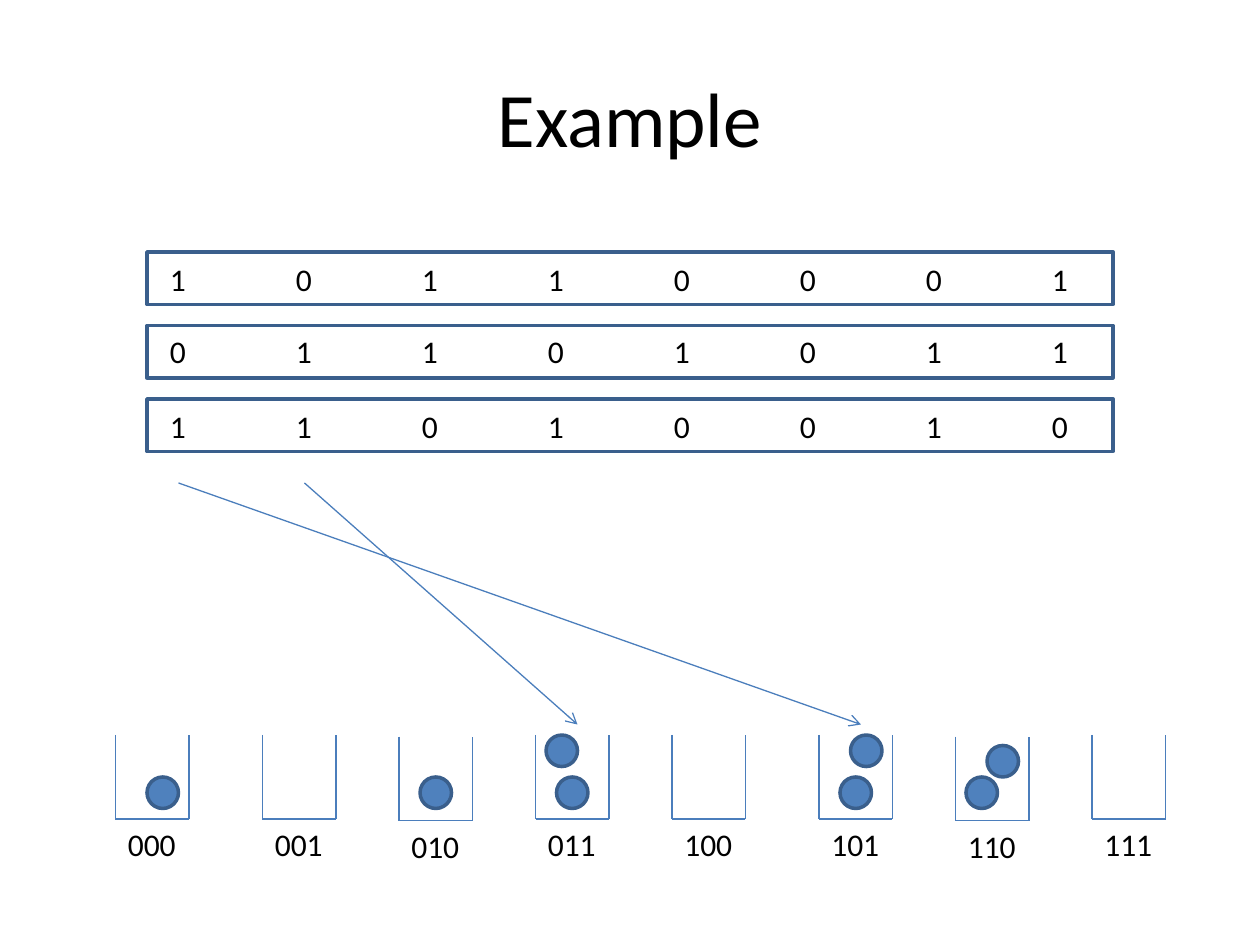
"""Build a slide that drops bit columns into eight labelled hash buckets."""
from dataclasses import dataclass

from lxml.etree import SubElement
from pptx import Presentation
from pptx.dml.color import RGBColor
from pptx.enum.shapes import MSO_CONNECTOR, MSO_SHAPE
from pptx.enum.text import MSO_ANCHOR, MSO_AUTO_SIZE, PP_ALIGN
from pptx.oxml.ns import qn
from pptx.util import Inches, Pt


@dataclass(frozen=True)
class Theme:
    font: str = "Calibri"
    ink: RGBColor = RGBColor.from_string("000000")
    ball: RGBColor = RGBColor.from_string("4F81BD")
    outline: RGBColor = RGBColor.from_string("3A5F8C")
    stroke: RGBColor = RGBColor.from_string("4B7EBC")
    title_size: Pt = Pt(44)
    body_size: Pt = Pt(18)
    outline_width: Pt = Pt(2)
    stroke_width: Pt = Pt(0.75)


theme = Theme()
deck = Presentation()
deck.slide_width, deck.slide_height = Inches(10), Inches(7.5)
page = deck.slides.add_slide(deck.slide_layouts[6])
unit = deck.slide_width / 120


def add_text(shapes, text, area, size):
    box = shapes.add_textbox(*[round(unit * length) for length in area])
    frame = box.text_frame
    frame.word_wrap = False
    frame.auto_size = MSO_AUTO_SIZE.SHAPE_TO_FIT_TEXT
    para = frame.paragraphs[0]
    para.alignment = PP_ALIGN.LEFT
    span = para.add_run()
    span.text = text
    span.font.name = theme.font
    span.font.size = size
    span.font.color.rgb = theme.ink
    return frame


def add_line(shapes, *ends):
    line = shapes.add_connector(MSO_CONNECTOR.STRAIGHT, *[round(unit * end) for end in ends])
    line.line.color.rgb = theme.stroke
    line.line.width = theme.stroke_width
    SubElement(line.element.spPr, qn("a:effectLst"))
    return line


title = add_text(page.shapes, "Example", (6, 3.6, 108, 15), theme.title_size)
title.word_wrap = True
title.auto_size = MSO_AUTO_SIZE.NONE
title.vertical_anchor = MSO_ANCHOR.MIDDLE
title.paragraphs[0].alignment = PP_ALIGN.CENTER

bit_rows = [("10110001", 24.15), ("01101011", 31), ("11010010", 38.2)]
for row, (bits, text_top) in enumerate(bit_rows):
    line_of_bits = add_text(page.shapes, "\t".join(bits), (15, text_top, 88.8, 4.8), theme.body_size)
    properties = line_of_bits.paragraphs[0]._p.get_or_add_pPr()
    properties.set("defTabSz", str(Inches(1)))
    area = (14, 24 + 7 * row, 92, 5)
    frame = page.shapes.add_shape(MSO_SHAPE.RECTANGLE, *[round(unit * length) for length in area])
    frame.shadow.inherit = False
    frame.fill.background()
    frame.line.color.rgb = theme.outline
    frame.line.width = theme.outline_width

bucket_width, bucket_height = 7, 8
for number, left in enumerate((11, 25, 38, 51, 64, 78, 91, 104)):
    label = f"{number:03b}"
    top = 70.15 if label.endswith("10") else 70
    right, bottom = left + bucket_width, top + bucket_height
    bucket = page.shapes.add_group_shape()
    corners = [(left, top), (left, bottom), (right, bottom), (right, top)]
    for start, end in zip(corners, corners[1:]):
        add_line(bucket.shapes, *start, *end)
    add_text(bucket.shapes, label, (left, bottom, bucket_width, 4.8), theme.body_size)

for column, target in ((17, 82), (29, 55)):
    arrow = add_line(page.shapes, column, 46, target, 69)
    SubElement(arrow.element.spPr.find(qn("a:ln")), qn("a:tailEnd"), type="arrow")

balls = [(53, 74), (80, 74), (92, 74), (81, 70), (40, 74), (14, 74), (52, 70), (94, 71)]
for left, top in balls:
    area = (left, top, 3, 3)
    ball = page.shapes.add_shape(MSO_SHAPE.OVAL, *[round(unit * length) for length in area])
    ball.shadow.inherit = False
    ball.fill.solid()
    ball.fill.fore_color.rgb = theme.ball
    ball.line.color.rgb = theme.outline
    ball.line.width = theme.outline_width

deck.save("out.pptx")
